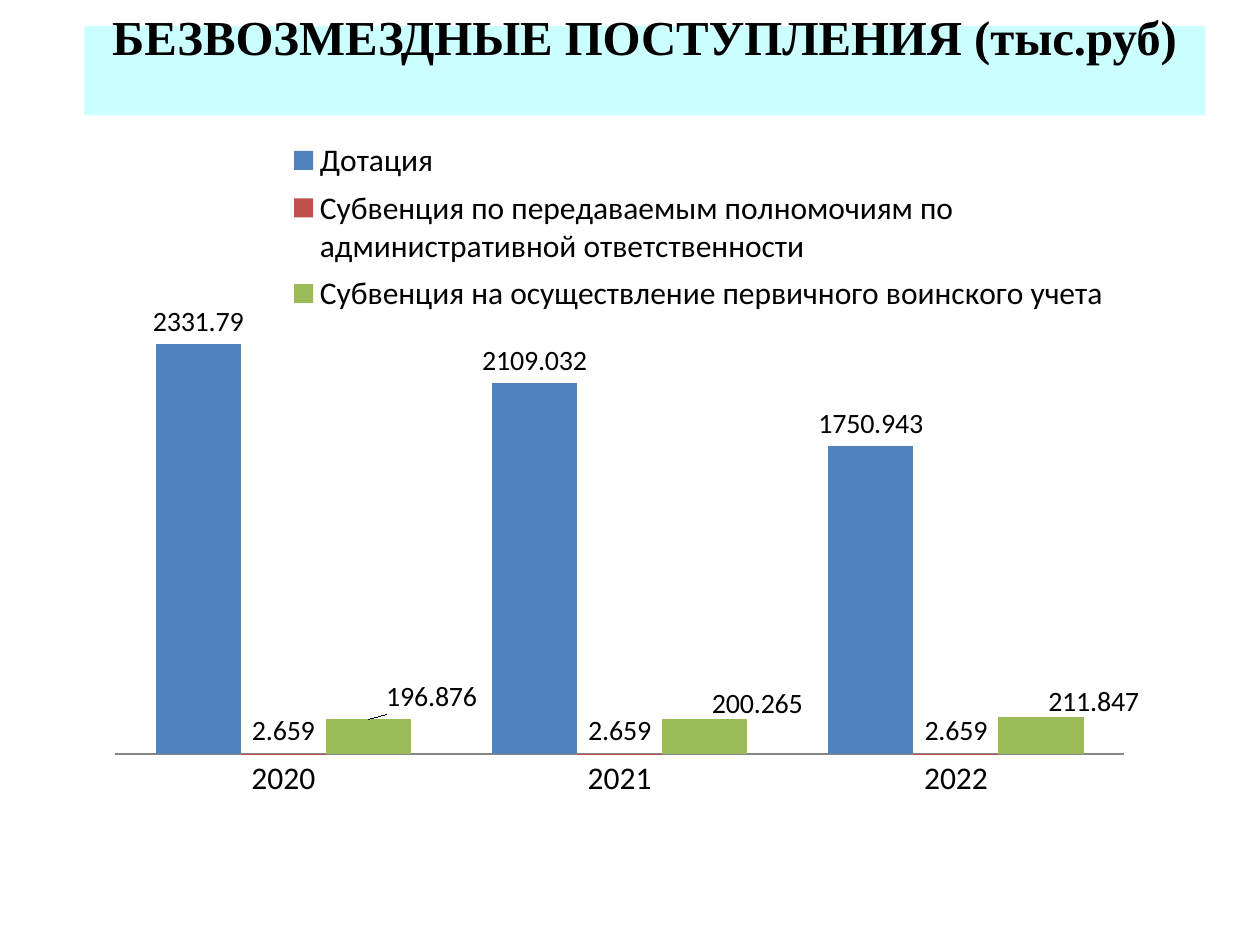
from dataclasses import dataclass

import lxml.etree
import pptx
import pptx.chart.data
import pptx.dml.color
import pptx.enum.chart
import pptx.enum.shapes
import pptx.enum.text
import pptx.oxml.ns
import pptx.util

Cm, Pt = pptx.util.Cm, pptx.util.Pt
qn = pptx.oxml.ns.qn


def rgb(value):
    return pptx.dml.color.RGBColor.from_string(value)


@dataclass(frozen=True)
class Theme:
    band: str = "CCFFFF"
    text: str = "000000"
    axis: str = "868686"
    series: tuple = ("4F81BD", "C0504D", "9BBB59")
    title_font: str = "Times New Roman"
    chart_font: str = "Calibri"
    title_size: float = 27.9
    chart_size: float = 18
    label_size: float = 16


THEME = Theme()
YEARS = ("2020", "2021", "2022")
INCOME = {
    "Дотация": (2331.79, 2109.032, 1750.943),
    "Субвенция по передаваемым полномочиям по административной ответственности":
        (2.659, 2.659, 2.659),
    "Субвенция на осуществление первичного воинского учета":
        (196.876, 200.265, 211.847),
}
# Shifts of the last series' labels, as fractions of the chart
LABEL_SHIFTS = ((0.06, 0), (0.05, 0.01), (0.05, 0.01))


def set_layout(parent, index, **values):
    """Give a chart part a manual layout."""
    for old in parent.findall(qn("c:layout")):
        parent.remove(old)
    layout = lxml.etree.Element(qn("c:layout"))
    manual = lxml.etree.SubElement(layout, qn("c:manualLayout"))
    for name, value in values.items():
        lxml.etree.SubElement(manual, qn("c:" + name)).set("val", str(value))
    parent.insert(index, layout)


def add_title(s, text, left, top, width, height):
    sp = s.shapes.add_shape(pptx.enum.shapes.MSO_SHAPE.RECTANGLE, left, top, width, height)
    sp.shadow.inherit = False
    sp.fill.solid()
    sp.fill.fore_color.rgb = rgb(THEME.band)
    sp.line.fill.background()
    tf = sp.text_frame
    tf.word_wrap = True
    tf.vertical_anchor = pptx.enum.text.MSO_ANCHOR.MIDDLE
    # The bottom inset lifts the heading to the band's upper edge
    tf.margin_top, tf.margin_bottom = 0, Cm(1.4)
    tf.text = text
    p = tf.paragraphs[0]
    p.alignment = pptx.enum.text.PP_ALIGN.CENTER
    font = p.runs[0].font
    font.name, font.size, font.bold = THEME.title_font, Pt(THEME.title_size), True
    font.color.rgb = rgb(THEME.text)


def style_series(series, color):
    series.format.fill.solid()
    series.format.fill.fore_color.rgb = rgb(color)
    series.invert_if_negative = False
    labels = series.data_labels
    labels.show_value = True
    labels.position = pptx.enum.chart.XL_LABEL_POSITION.OUTSIDE_END
    labels.font.size = Pt(THEME.label_size)


def shift_labels(series, shifts):
    for i, (x, y) in enumerate(shifts):
        label = series.points[i].data_label
        label.font.size = Pt(THEME.label_size)
        label.position = pptx.enum.chart.XL_LABEL_POSITION.OUTSIDE_END
    for item, (x, y) in zip(series.data_labels._element.findall(qn("c:dLbl")), shifts):
        set_layout(item, 1, x=x, y=y)


def add_income_chart(s, left, top, width, height):
    data = pptx.chart.data.CategoryChartData()
    data.categories = YEARS
    for name, values in INCOME.items():
        data.add_series(name, values)
    chart = s.shapes.add_chart(pptx.enum.chart.XL_CHART_TYPE.COLUMN_CLUSTERED,
                               left, top, width, height, data).chart
    chart.has_title = False
    chart.font.name, chart.font.size = THEME.chart_font, Pt(THEME.chart_size)
    chart.font.color.rgb = rgb(THEME.text)

    # Columns and their values
    plot = chart.plots[0]
    plot.gap_width, plot.overlap, plot.vary_by_categories = 95, 0, False
    for series, color in zip(plot.series, THEME.series):
        style_series(series, color)
    shift_labels(plot.series[-1], LABEL_SHIFTS)

    # Axes
    chart.category_axis.major_tick_mark = pptx.enum.chart.XL_TICK_MARK.NONE
    chart.category_axis.format.line.color.rgb = rgb(THEME.axis)
    axis = chart.value_axis
    axis.visible = axis.has_major_gridlines = False
    axis.minimum_scale, axis.maximum_scale = 0, 2500

    # Legend and plot placement
    chart.has_legend = True
    chart.legend.position = pptx.enum.chart.XL_LEGEND_POSITION.TOP
    chart.legend.include_in_layout = False
    set_layout(chart.legend._element, 1, xMode="edge", yMode="edge",
               x=0.16, y=0.01, w=0.79, h=0.26)
    plot_area = chart._chartSpace.find(qn("c:chart")).find(qn("c:plotArea"))
    set_layout(plot_area, 0, layoutTarget="inner", xMode="edge", yMode="edge",
               x=0, y=0.26, w=0.96, h=0.6)


def main():
    prs = pptx.Presentation()
    prs.slide_width, prs.slide_height = Cm(25.4), Cm(19.05)
    s = prs.slides.add_slide(prs.slide_layouts[6])
    add_title(s, "БЕЗВОЗМЕЗДНЫЕ ПОСТУПЛЕНИЯ (тыс.руб)", Cm(1.7), Cm(0.53), Cm(22.6), Cm(1.8))
    add_income_chart(s, Cm(2.31), Cm(2.51), Cm(21.2), Cm(14.76))
    prs.save("out.pptx")


if __name__ == "__main__":
    main()
